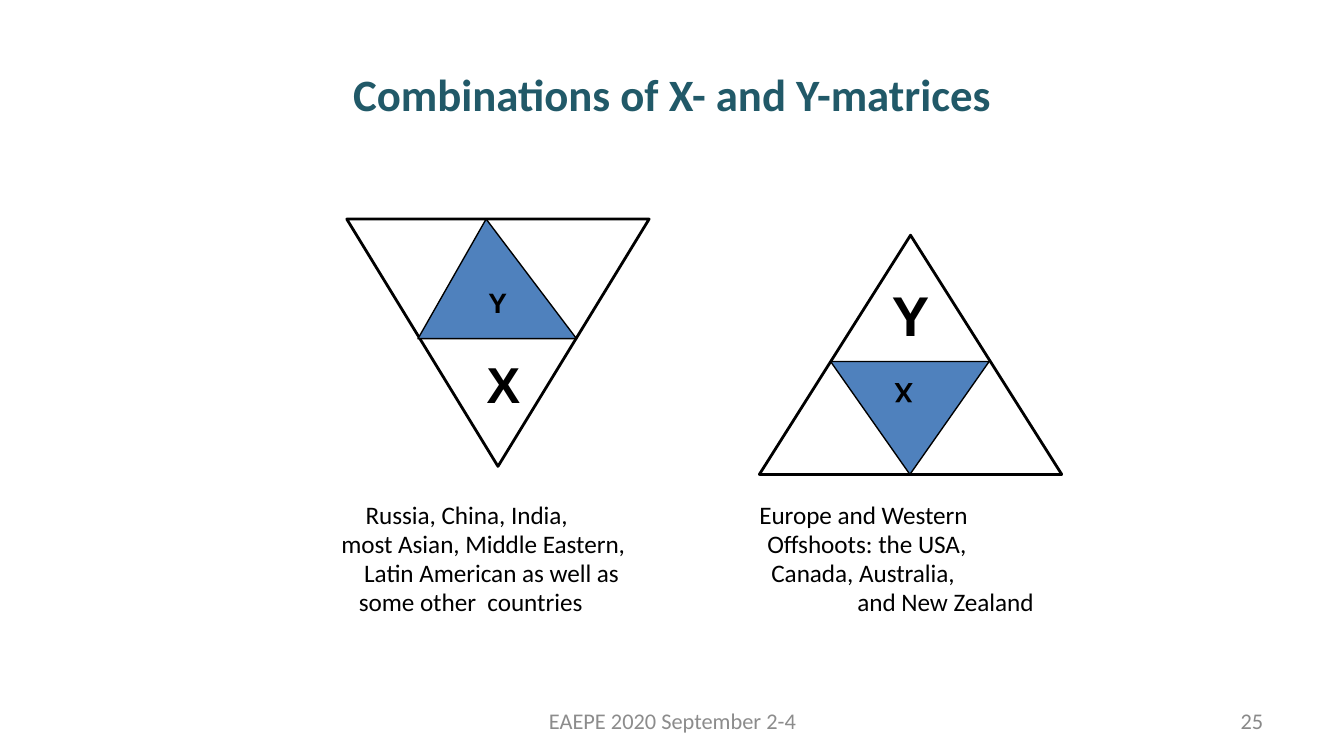
"""Build the slide on combinations of X- and Y-matrices."""
from dataclasses import dataclass
from typing import Optional

from pptx import Presentation
from pptx.dml.color import RGBColor
from pptx.enum import shapes, text
from pptx.util import Inches, Pt

COLORS = {
    "title": "215968",
    "ink": "000000",
    "paper": "FFFFFF",
    "inner": "4F81BD",
    "number": "898989",
    "footer": "8C8C8C",
}
ALIGN = text.PP_ALIGN


@dataclass(frozen=True)
class Box:
    left: float
    top: float
    width: float
    height: float

    def lengths(self) -> tuple:
        """Return the box as Inches."""
        return tuple(map(Inches, (self.left, self.top, self.width, self.height)))


@dataclass(frozen=True)
class Style:
    size: float
    color: str = "ink"
    bold: bool = False
    font: str = "Calibri"


@dataclass(frozen=True)
class Triangle:
    box: Box
    fill: str
    line: float
    apex: float = 0.5
    rotation: int = 0
    letter: Optional[str] = None


@dataclass(frozen=True)
class Label:
    box: Box
    words: str
    style: Style
    align: ALIGN = ALIGN.CENTER


@dataclass(frozen=True)
class Caption:
    box: Box
    lines: tuple


LETTER = Style(15, bold=True, font="Arial")

TRIANGLES = (
    Triangle(Box(2.58, 1.63, 2.25, 1.84), "paper", 1.5, rotation=180),
    Triangle(Box(5.65, 1.75, 2.25, 1.78), "paper", 1.5),
    Triangle(Box(3.11, 1.63, 1.18, 0.89), "inner", 0.75, apex=0.43, letter="Y"),
    Triangle(Box(6.18, 2.69, 1.18, 0.84), "inner", 0.75, rotation=180, letter="X"),
)
LABELS = (
    Label(Box(0.5, 0.23, 9, 0.94), "Combinations of X- and Y-matrices",
          Style(24, "title", True)),
    Label(Box(3.52, 2.57, 0.45, 0.56), "X", Style(27, bold=True, font="Arial")),
    Label(Box(6.54, 2.03, 0.47, 0.61), "Y", Style(30, bold=True, font="Arial")),
    Label(Box(3.42, 5.21, 3.17, 0.3), "EAEPE 2020 September 2-4",
          Style(12, "footer")),
    Label(Box(7.17, 5.21, 2.23, 0.3), "25", Style(12, "number"), ALIGN.RIGHT),
)
CAPTIONS = (
    Caption(Box(2.54, 3.71, 2.7, 1.18), (
        (0.18, "Russia, China, India,"),
        (0, "most Asian, Middle Eastern,"),
        (0.17, "Latin American as well as"),
        (0.13, "some other  countries"),
    )),
    Caption(Box(5.65, 3.71, 2.73, 1.18), (
        (0, "Europe and Western"),
        (0.06, "Offshoots: the USA,"),
        (0.09, "Canada, Australia,"),
        (0.73, "and New Zealand"),
    )),
)


def color(name: str) -> RGBColor:
    """Look up a named colour."""
    return RGBColor.from_string(COLORS[name])


def set_margins(frame, left: float = 0, top: float = 0) -> None:
    """Set the left and top insets and clear the others."""
    frame.margin_left, frame.margin_top = Inches(left), Inches(top)
    frame.margin_right = frame.margin_bottom = 0


def add_run(paragraph, words: str, style: Style) -> None:
    """Append a styled run."""
    run = paragraph.add_run()
    run.text = words
    run.font.name = style.font
    run.font.size = Pt(style.size)
    run.font.bold = style.bold
    run.font.color.rgb = color(style.color)


def draw_triangle(slide, triangle: Triangle) -> None:
    """Draw a triangle with its optional letter."""
    shape = slide.shapes.add_shape(
        shapes.MSO_SHAPE.ISOSCELES_TRIANGLE, *triangle.box.lengths())
    shape.shadow.inherit = False
    shape.adjustments[0] = triangle.apex
    shape.rotation = triangle.rotation
    shape.fill.solid()
    shape.fill.fore_color.rgb = color(triangle.fill)
    shape.line.color.rgb = color("ink")
    shape.line.width = Pt(triangle.line)
    if triangle.letter:
        frame = shape.text_frame
        set_margins(frame, left=0.09, top=0.05)
        frame.vertical_anchor = text.MSO_ANCHOR.TOP
        frame.paragraphs[0].alignment = ALIGN.CENTER
        add_run(frame.paragraphs[0], triangle.letter, LETTER)


def draw_label(slide, label: Label) -> None:
    """Draw a single vertically centred line."""
    frame = slide.shapes.add_textbox(*label.box.lengths()).text_frame
    set_margins(frame)
    frame.word_wrap = True
    frame.vertical_anchor = text.MSO_ANCHOR.MIDDLE
    frame.paragraphs[0].alignment = label.align
    add_run(frame.paragraphs[0], label.words, label.style)


def draw_caption(slide, caption: Caption) -> None:
    """Draw a list of countries with its own indent on each line."""
    frame = slide.shapes.add_textbox(*caption.box.lengths()).text_frame
    set_margins(frame, top=0.05)
    frame.word_wrap = True
    for index, (indent, words) in enumerate(caption.lines):
        paragraph = frame.add_paragraph() if index else frame.paragraphs[0]
        paragraph.line_spacing = 0.8
        paragraph.space_before = Pt(2.5 if index else 0)
        paragraph._p.get_or_add_pPr().set("marL", str(Inches(indent)))
        add_run(paragraph, words, Style(13.5))


def main() -> None:
    """Build and save the presentation."""
    deck = Presentation()
    deck.slide_width, deck.slide_height = Inches(10), Inches(10 * 9 / 16)
    slide = deck.slides.add_slide(deck.slide_layouts[6])
    for triangle in TRIANGLES:
        draw_triangle(slide, triangle)
    for label in LABELS:
        draw_label(slide, label)
    for caption in CAPTIONS:
        draw_caption(slide, caption)
    deck.save("out.pptx")


if __name__ == "__main__":
    main()
